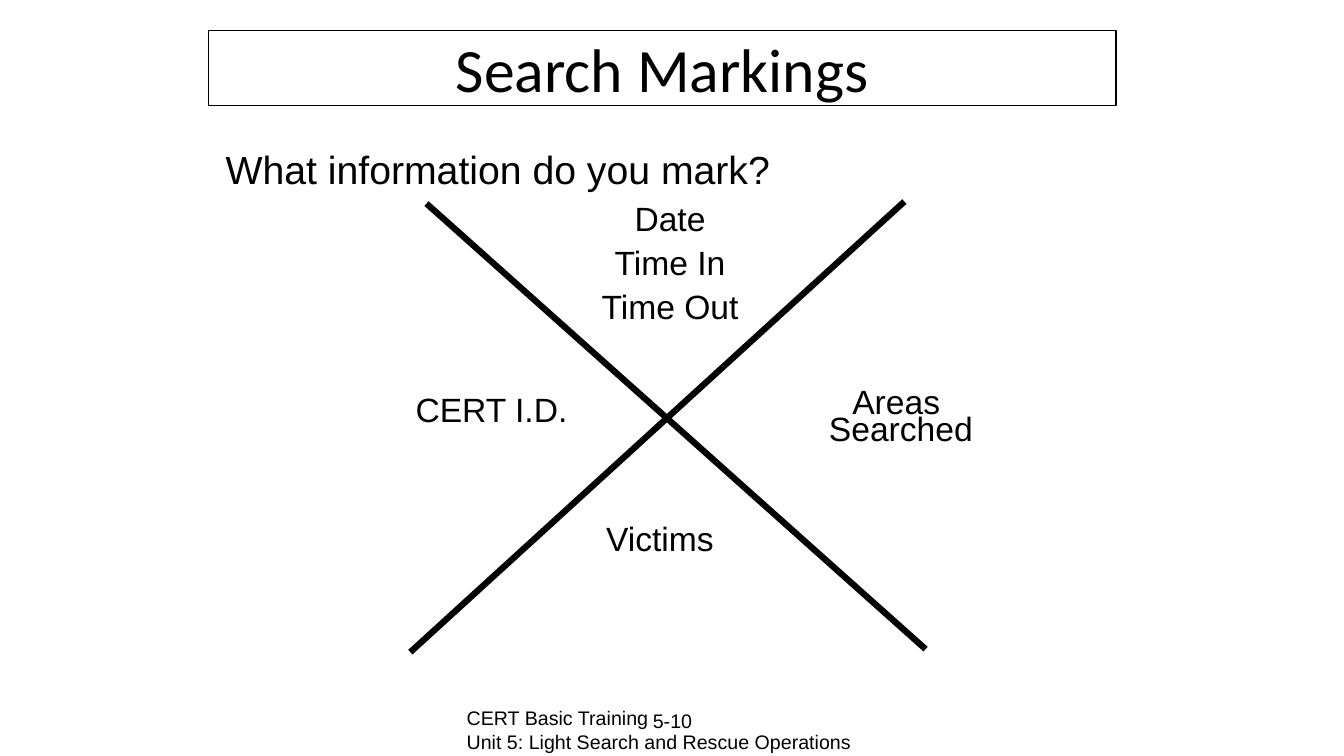
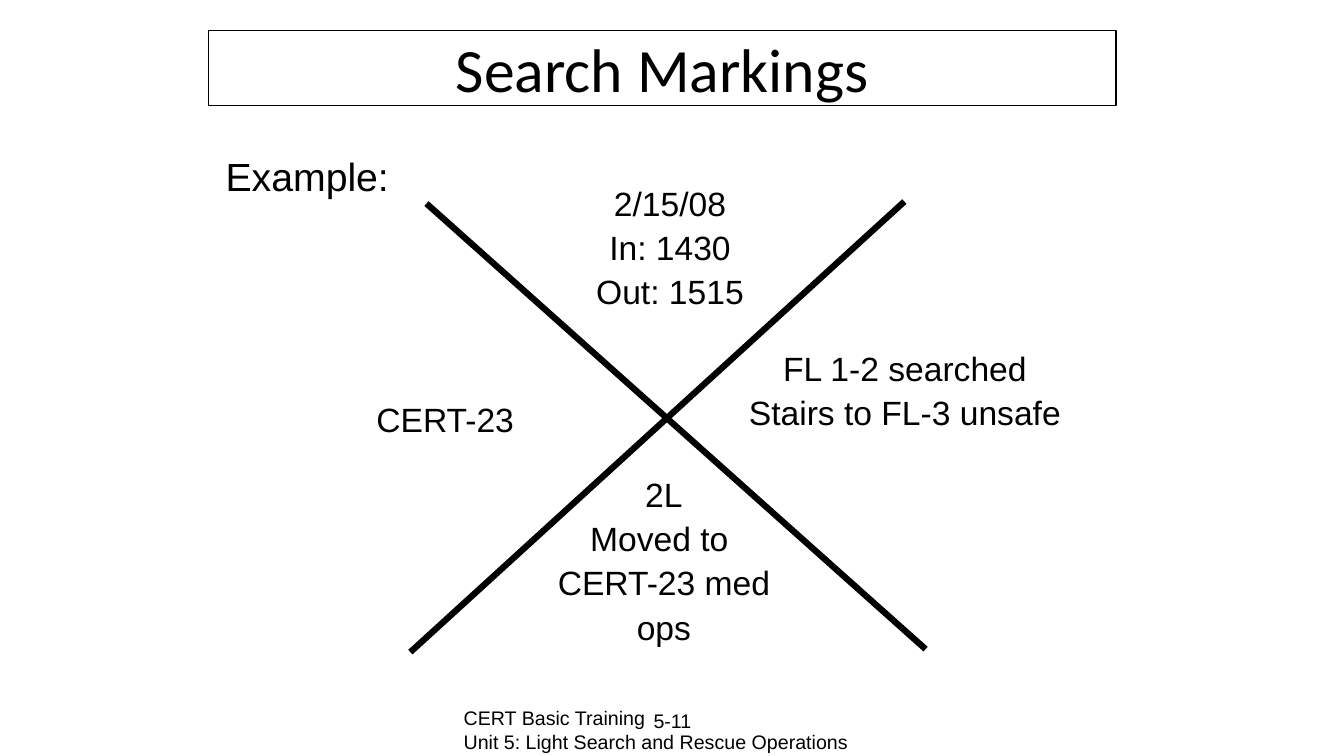
"""Builds two slides that explain the search marking cross."""
from dataclasses import dataclass

from lxml import etree
from pptx import Presentation, util as u
from pptx.dml.color import RGBColor
from pptx.enum import shapes, text
from pptx.oxml.ns import qn


@dataclass(frozen=True)
class Theme:
    ink: RGBColor = RGBColor(0, 0, 0)
    paper: RGBColor = RGBColor(255, 255, 255)
    title_font: str = "Calibri"
    body_font: str = "Arial"
    title_size: int = 44
    prompt_size: int = 28
    label_size: int = 24
    footer_size: int = 14
    border: int = 1
    stroke: float = 4.5
    label_spacing: float = 0.65
    label_gap: float = 12.8


SCALE = 9144
LABEL_WIDTH = 431
CROSS = ((423, 202, 918, 644), (407, 647, 897, 200))


def px(*lengths):
    return [u.Emu(n * SCALE) for n in lengths]


class Deck:
    def __init__(self, theme):
        self.theme = theme
        self.prs = Presentation()
        self.prs.slide_width, self.prs.slide_height = px(1333, 750)
        self.s = None

    def add_slide(self, title):
        self.s = self.prs.slides.add_slide(self.prs.slide_layouts[5])
        self.s.background.fill.solid()
        self.s.background.fill.fore_color.rgb = self.theme.paper
        self.title(title)

    def fill_text(self, sp, content, size, font, align, anchor):
        tf = sp.text_frame
        tf.word_wrap = True
        tf.auto_size = text.MSO_AUTO_SIZE.NONE
        tf.vertical_anchor = anchor
        tf.text = content
        for p in tf.paragraphs:
            p.alignment = align
            for r in p.runs:
                r.font.size = u.Pt(size)
                r.font.name = font
                r.font.color.rgb = self.theme.ink
        return tf

    def title(self, content):
        t = self.theme
        sp = self.s.shapes.title
        sp.left, sp.top, sp.width, sp.height = px(207, 30, 900, 75)
        sp.fill.solid()
        sp.fill.fore_color.rgb = t.paper
        sp.line.color.rgb = t.ink
        sp.line.width = u.Pt(t.border)
        self.fill_text(sp, content, t.title_size, t.title_font,
                       text.PP_ALIGN.CENTER, text.MSO_ANCHOR.MIDDLE)

    def text_box(self, box, content, size, align=text.PP_ALIGN.LEFT,
                 anchor=text.MSO_ANCHOR.TOP):
        sp = self.s.shapes.add_textbox(*px(*box))
        return self.fill_text(sp, content, size, self.theme.body_font,
                              align, anchor)

    def prompt(self, top, content):
        tf = self.text_box((214, top, 683, 57), content, self.theme.prompt_size)
        tf.paragraphs[0].space_before = u.Pt(self.theme.prompt_size / 2)

    def label(self, left, top, height, content):
        t = self.theme
        tf = self.text_box((left, top, LABEL_WIDTH, height), content,
                           t.label_size, text.PP_ALIGN.CENTER)
        for p in tf.paragraphs:
            p.line_spacing = t.label_spacing
            p.space_before = u.Pt(t.label_gap)

    def cross(self):
        for ends in CROSS:
            line = self.s.shapes.add_connector(
                shapes.MSO_CONNECTOR.STRAIGHT, *px(*ends))
            line.line.color.rgb = self.theme.ink
            line.line.width = u.Pt(self.theme.stroke)
            etree.SubElement(line._element.spPr, qn("a:effectLst"))

    def footer(self, left, number):
        size, middle = self.theme.footer_size, text.MSO_ANCHOR.MIDDLE
        self.text_box((442, 695, 450, 40), number, size,
                      text.PP_ALIGN.CENTER, middle)
        self.text_box((left, 698, 417, 52),
                      "CERT Basic Training\nUnit 5: Light Search and Rescue Operations",
                      size, anchor=middle)


SLIDES = (
    dict(prompt=(139, "What information do you mark?"),
         footer=(453, "5-10"),
         labels=((449, 204, 130, "Date\nTime In\nTime Out"),
                 (272, 393, 84, "CERT I.D."),
                 (678, 386, 64, "Areas \vSearched"),
                 (439, 521, 38, "Victims"))),
    dict(prompt=(146, "Example:"),
         footer=(450, "5-11"),
         labels=((449, 189, 130, "2/15/08\nIn: 1430\nOut: 1515"),
                 (226, 403, 37, "CERT-23"),
                 (682, 353, 84, "FL 1-2 searched\nStairs to FL-3 unsafe"),
                 (443, 478, 177, "2L\nMoved to \nCERT-23 med\nops"))),
)


def main():
    deck = Deck(Theme())
    for slide in SLIDES:
        deck.add_slide("Search Markings")
        deck.cross()
        deck.prompt(*slide["prompt"])
        for label in slide["labels"]:
            deck.label(*label)
        deck.footer(*slide["footer"])
    deck.prs.save("out.pptx")


if __name__ == "__main__":
    main()
